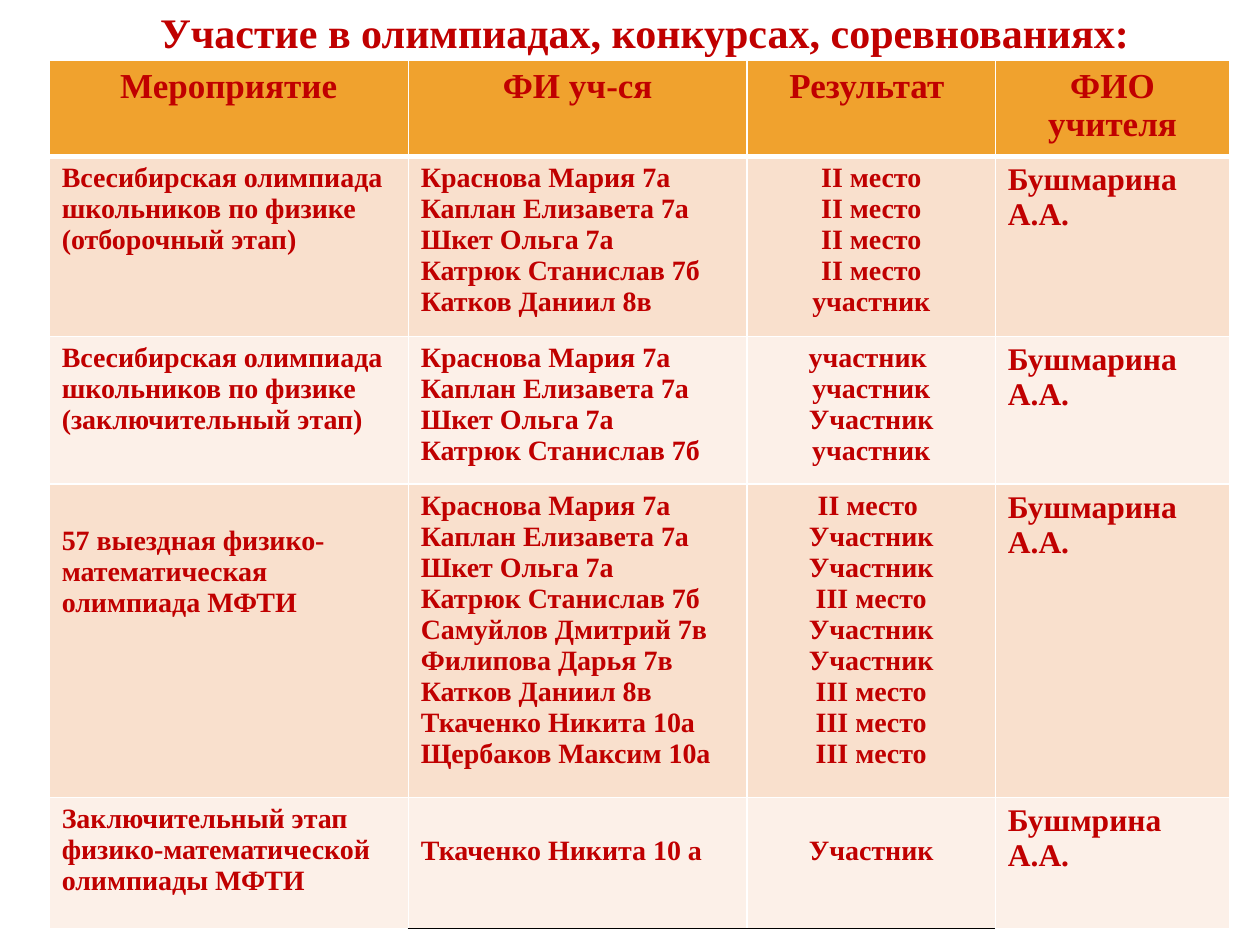
"""Build a slide with a table of pupils' results in olympiads."""
from dataclasses import dataclass

from lxml.etree import SubElement
from pptx import Presentation
from pptx.dml.color import RGBColor
from pptx.enum.text import MSO_ANCHOR, PP_ALIGN
from pptx.oxml.ns import qn
from pptx.util import Inches, Pt

FONT, RED, WHITE, BLACK = "Times New Roman", "C00000", "FFFFFF", "000000"
HEADER_FILL, BAND_FILLS = "F0A22E", ("F9E0CD", "FCF0E8")
COLUMN_WIDTHS = (2.85, 2.69, 1.97, 1.86)
ROW_HEIGHTS = (0.76, 1.43, 1.17, 2.49, 1.04)
BODY_SIZES = (16, 16, 16, 18)
CENTRED_COLUMN = 2
HEADINGS = ("Мероприятие", "ФИ уч-ся", "Результат ", "ФИО учителя")
PUPILS = ("Краснова Мария 7а", "Каплан Елизавета 7а", "Шкет Ольга 7а", "Катрюк Станислав 7б")


@dataclass(frozen=True)
class Contest:
    """One table row; drops are the extra top margins of its cells in inches."""

    event: str
    pupils: tuple[str, ...]
    results: tuple[str, ...]
    teacher: str = "Бушмарина А.А."
    drops: tuple[float, ...] = (0, 0, 0, 0)

    def texts(self) -> tuple[str, ...]:
        """Return the text of each cell, one paragraph a line."""
        return self.event, "\n".join(self.pupils), "\n".join(self.results), self.teacher


CONTESTS = (
    Contest(
        "Всесибирская олимпиада школьников по физике (отборочный этап)",
        PUPILS + ("Катков Даниил 8в",),
        ("II место",) * 4 + ("участник",),
    ),
    Contest(
        "Всесибирская олимпиада школьников по физике (заключительный этап)",
        PUPILS,
        ("участник ", "участник", "Участник", " участник "),
    ),
    Contest(
        "57 выездная физико-математическая олимпиада МФТИ",
        PUPILS + ("Самуйлов Дмитрий 7в", "Филипова Дарья 7в", "Катков Даниил 8в",
                  "Ткаченко Никита 10а", "Щербаков Максим 10а"),
        ("II место ", "Участник", "Участник", "III место", "Участник", "Участник")
        + ("III место",) * 3,
        drops=(0.28, 0, 0, 0),
    ),
    Contest(
        "Заключительный этап физико-математической олимпиады МФТИ",
        ("Ткаченко Никита 10 а",),
        ("Участник",),
        teacher="Бушмрина А.А.",
        drops=(0, 0.25, 0.25, 0),
    ),
)


def colour(value: str) -> RGBColor:
    """Turn a hex string into a colour."""
    return RGBColor.from_string(value)


def write(frame, text: str, size: float, align) -> None:
    """Set the text of a frame in the slide's bold red type."""
    frame.text = text
    for paragraph in frame.paragraphs:
        paragraph.alignment = align
        for span in paragraph.runs:
            span.font.name, span.font.size, span.font.bold = FONT, Pt(size), True
            span.font.color.rgb = colour(RED)


def draw_borders(cell, top: float, bottom: float, bottom_colour: str) -> None:
    """Give a cell white edges, with its own top and bottom widths."""
    properties = cell._tc.get_or_add_tcPr()
    edges = (("L", 1, WHITE), ("R", 1, WHITE), ("T", top, WHITE), ("B", bottom, bottom_colour))
    for index, (side, width, shade) in enumerate(edges):
        line = SubElement(properties, qn(f"a:ln{side}"), w=str(Pt(width)))
        fill = SubElement(line, qn("a:solidFill"))
        SubElement(fill, qn("a:srgbClr"), val=shade)
        properties.insert(index, line)


def fill_cell(cell, text: str, size: float, align, shade: str, drop: float = 0) -> None:
    """Write and colour one cell."""
    write(cell.text_frame, text, size, align)
    cell.margin_top = Inches(0.05 + drop)
    cell.fill.solid()
    cell.fill.fore_color.rgb = colour(shade)


def add_title(page) -> None:
    """Place the slide's heading in the title placeholder."""
    title = page.shapes.title
    title.left, title.top, title.width, title.height = map(Inches, (1.17, 0, 9.45, 0.5))
    title.text_frame.vertical_anchor = MSO_ANCHOR.TOP
    write(title.text_frame, "Участие в олимпиадах, конкурсах, соревнованиях:", 24, PP_ALIGN.LEFT)


def add_results(page) -> None:
    """Draw the table of contests."""
    last = len(CONTESTS)
    table = page.shapes.add_table(
        last + 1, len(HEADINGS), Inches(0.39), Inches(0.48),
        Inches(sum(COLUMN_WIDTHS)), Inches(sum(ROW_HEIGHTS)),
    ).table
    for column, width in zip(table.columns, COLUMN_WIDTHS):
        column.width = Inches(width)
    for row, height in zip(table.rows, ROW_HEIGHTS):
        row.height = Inches(height)
    for column, heading in enumerate(HEADINGS):
        cell = table.cell(0, column)
        fill_cell(cell, heading, 20, PP_ALIGN.CENTER, HEADER_FILL)
        draw_borders(cell, 1, 3, WHITE)
    for row, contest in enumerate(CONTESTS, start=1):
        for column, text in enumerate(contest.texts()):
            cell = table.cell(row, column)
            align = PP_ALIGN.CENTER if column == CENTRED_COLUMN else PP_ALIGN.LEFT
            fill_cell(cell, text, BODY_SIZES[column], align,
                      BAND_FILLS[(row - 1) % 2], contest.drops[column])
            underlined = row == last and column in (1, 2)
            draw_borders(cell, 3 if row == 1 else 1, 1, BLACK if underlined else WHITE)


def main() -> None:
    """Build and save the deck."""
    deck = Presentation()
    deck.slide_width, deck.slide_height = Inches(10), Inches(7.5)
    page = deck.slides.add_slide(deck.slide_layouts[5])
    add_title(page)
    add_results(page)
    deck.save("out.pptx")


if __name__ == "__main__":
    main()
